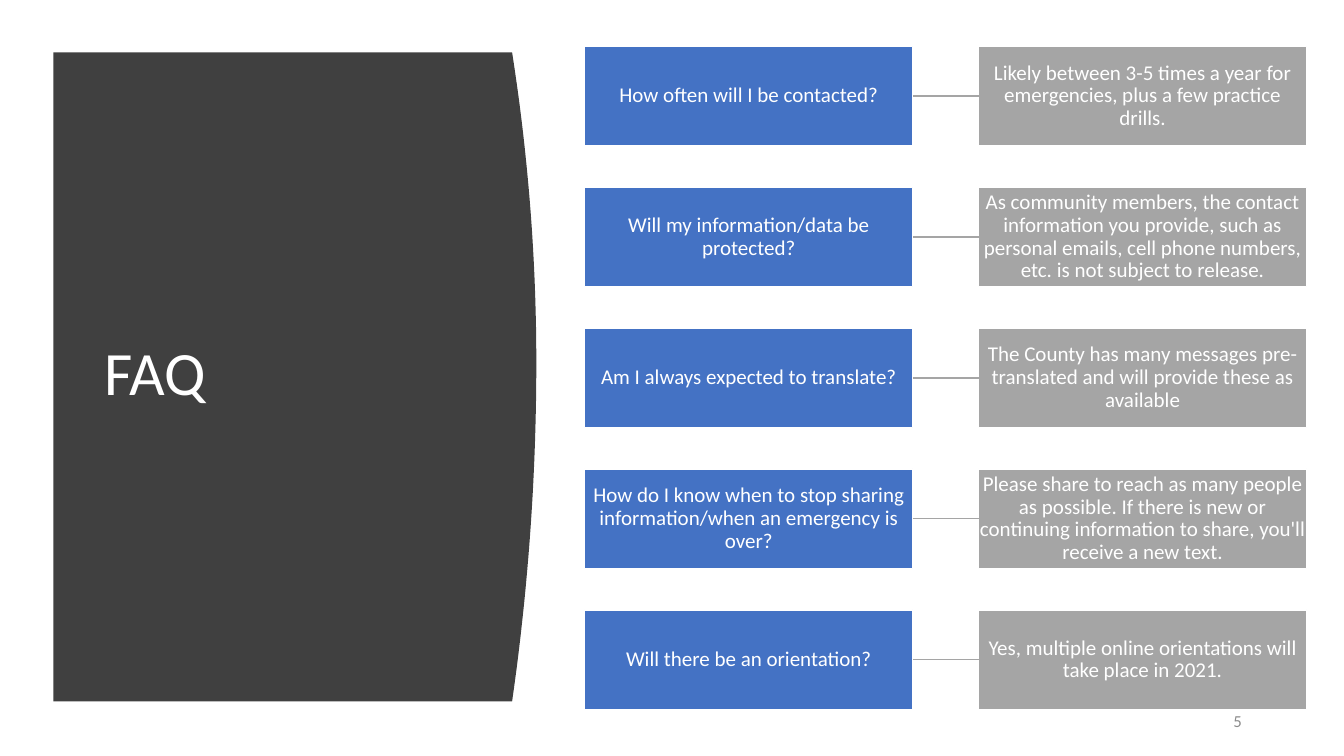
"""Build the FAQ slide: a curved title panel beside five question and answer pairs."""
import dataclasses
import typing

import pptx
import pptx.dml.color
import pptx.enum.shapes
import pptx.enum.text
import pptx.oxml
import pptx.oxml.ns
import pptx.util

Pt = pptx.util.Pt
RGB = pptx.dml.color.RGBColor.from_string
ALIGN = pptx.enum.text.PP_ALIGN


@dataclasses.dataclass(frozen=True)
class Theme:
    font: str = "Calibri"
    panel: str = "404040"
    question: str = "4472C4"
    answer: str = "A5A5A5"
    light: str = "FFFFFF"
    number: str = "8C8C8C"
    title_size: float = 44
    card_size: float = 15
    number_size: float = 12


@dataclasses.dataclass(frozen=True)
class Box:
    left: float
    top: float
    width: float
    height: float

    def lengths(self) -> dict[str, int]:
        return {k: Pt(v) for k, v in dataclasses.asdict(self).items()}


@dataclasses.dataclass(frozen=True)
class Faq:
    question: str
    answer: str


THEME = Theme()
TITLE_BOX = Box(67.7, 79.9, 269.3, 377.3)
NUMBER_BOX = Box(678.2, 500.4, 216, 28.8)
PANEL = Box(38.2, 37.4, 327.6, 463.7)
BULGE, BULGE_Y, CURVE_STEPS = 17.3, 259, 40
CARD_WIDTH, CARD_HEIGHT = 234.3, 71
QUESTION_LEFT, ANSWER_LEFT = 417.7, 699
FIRST_TOP, ROW_PITCH = 33.2, 100.6
FAQS = [
    Faq("How often will I be contacted?",
        "Likely between 3-5 times a year for emergencies, plus a few practice drills."),
    Faq("Will my information/data be protected?",
        "As community members, the contact information you provide, such as personal "
        "emails, cell phone numbers, etc. is not subject to release."),
    Faq("Am I always expected to translate?",
        "The County has many messages pre-translated and will provide these as available"),
    Faq("How do I know when to stop sharing information/when an emergency is over?",
        "Please share to reach as many people as possible. If there is new or continuing "
        "information to share, you'll receive a new text."),
    Faq("Will there be an orientation?",
        "Yes, multiple online orientations will take place in 2021."),
]


def apply(target: typing.Any, values: dict[str, typing.Any]) -> None:
    for name, value in values.items():
        setattr(target, name, value)


def write(sp: typing.Any, text: str, size: float, color: str, align: typing.Any,
          margins: tuple[float, float] = (7.2, 3.6), spacing: float = 0.9) -> None:
    tf = sp.text_frame
    side, end = Pt(margins[0]), Pt(margins[1])
    apply(tf, {"word_wrap": True, "auto_size": pptx.enum.text.MSO_AUTO_SIZE.NONE,
               "vertical_anchor": pptx.enum.text.MSO_ANCHOR.MIDDLE,
               "margin_left": side, "margin_right": side,
               "margin_top": end, "margin_bottom": end})
    p = tf.paragraphs[0]
    apply(p, {"alignment": align, "line_spacing": spacing})
    r = p.add_run()
    r.text = text
    apply(r.font, {"name": THEME.font, "size": Pt(size)})
    r.font.color.rgb = RGB(color)


def paint(sp: typing.Any, color: str) -> None:
    sp.shadow.inherit = False
    sp.fill.solid()
    sp.fill.fore_color.rgb = RGB(color)


def add_panel(s: typing.Any) -> None:
    right, bottom = PANEL.left + PANEL.width, PANEL.top + PANEL.height
    curve = []
    for i in range(CURVE_STEPS + 1):
        y = PANEL.top + PANEL.height * i / CURVE_STEPS
        reach = BULGE_Y - PANEL.top if y < BULGE_Y else bottom - BULGE_Y
        curve.append((Pt(right + BULGE * (1 - ((y - BULGE_Y) / reach) ** 2)), Pt(y)))
    builder = s.shapes.build_freeform(Pt(PANEL.left), Pt(PANEL.top))
    builder.add_line_segments([*curve, (Pt(PANEL.left), Pt(bottom))], close=True)
    sp = builder.convert_to_shape()
    paint(sp, THEME.panel)
    sp.line.fill.background()


def add_card(s: typing.Any, left: float, top: float, text: str, color: str) -> typing.Any:
    box = Box(left, top, CARD_WIDTH, CARD_HEIGHT)
    sp = s.shapes.add_shape(pptx.enum.shapes.MSO_SHAPE.RECTANGLE, **box.lengths())
    paint(sp, color)
    sp.line.color.rgb = RGB(THEME.light)
    sp.line.width = Pt(1)
    write(sp, text, THEME.card_size, THEME.light, ALIGN.CENTER, (0.75, 0.75))
    return sp


def add_pair(s: typing.Any, row: int, faq: Faq) -> None:
    top = FIRST_TOP + row * ROW_PITCH
    question = add_card(s, QUESTION_LEFT, top, faq.question, THEME.question)
    answer = add_card(s, ANSWER_LEFT, top, faq.answer, THEME.answer)
    y = Pt(top + CARD_HEIGHT / 2)
    link = s.shapes.add_connector(pptx.enum.shapes.MSO_CONNECTOR.STRAIGHT,
                                  Pt(QUESTION_LEFT + CARD_WIDTH), y, Pt(ANSWER_LEFT), y)
    link.begin_connect(question, 3)
    link.end_connect(answer, 1)
    link.line.color.rgb = RGB(THEME.answer)
    link.line.width = Pt(1)
    link._element.spPr.append(
        pptx.oxml.parse_xml(f"<a:effectLst {pptx.oxml.ns.nsdecls('a')}/>"))


def main() -> None:
    prs = pptx.Presentation()
    apply(prs, {"slide_width": Pt(960), "slide_height": Pt(540)})
    s = prs.slides.add_slide(prs.slide_layouts[5])
    add_panel(s)
    title = s.shapes.title
    apply(title, TITLE_BOX.lengths())
    s.shapes._spTree.append(title._element)
    write(title, "FAQ", THEME.title_size, THEME.light, ALIGN.LEFT)
    for row, faq in enumerate(FAQS):
        add_pair(s, row, faq)
    number = s.shapes.add_textbox(**NUMBER_BOX.lengths())
    write(number, "5", THEME.number_size, THEME.number, ALIGN.RIGHT, spacing=1.0)
    prs.save("out.pptx")


if __name__ == "__main__":
    main()
